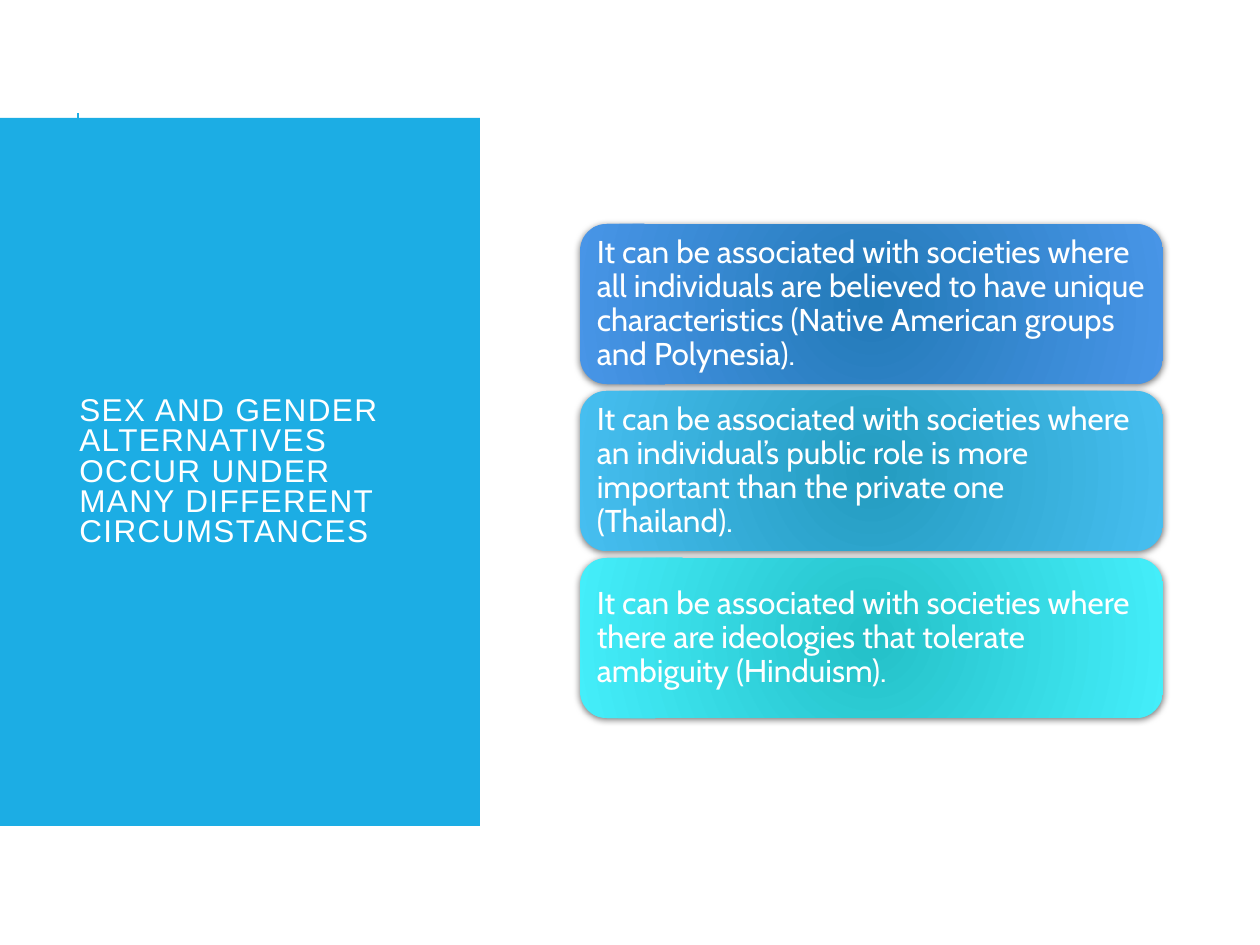
from lxml import etree
from pptx import Presentation
from pptx.dml.color import RGBColor
from pptx.enum.shapes import MSO_CONNECTOR, MSO_SHAPE
from pptx.enum.text import MSO_ANCHOR, PP_ALIGN
from pptx.oxml import parse_xml
from pptx.oxml.ns import nsdecls, qn
from pptx.util import Emu, Pt

STRAIGHT = MSO_CONNECTOR.STRAIGHT
RECT, ROUNDED = MSO_SHAPE.RECTANGLE, MSO_SHAPE.ROUNDED_RECTANGLE
MIDDLE, LEFT = MSO_ANCHOR.MIDDLE, PP_ALIGN.LEFT
EMU_PER_PX = 914400 / 126

ACCENT, WHITE = "1CADE4", "FFFFFF"
TITLE = "SEX AND GENDER ALTERNATIVES OCCUR UNDER MANY DIFFERENT CIRCUMSTANCES"
CARDS = [
    ("It can be associated with societies where all individuals are believed to "
     "have unique characteristics (Native American groups and Polynesia).",
     "237AB8", "4895E7"),
    ("It can be associated with societies where an individual’s public role is "
     "more important than the private one (Thailand).",
     "249CC0", "46BEF0"),
    ("It can be associated with societies where there are ideologies that "
     "tolerate ambiguity (Hinduism).",
     "24C0C8", "44EEFA"),
]
CARD_TOP, CARD_HEIGHT, CARD_GAP = 224, 160, 7


def px(n):
    return Emu(round(n * EMU_PER_PX))


def rgb(color):
    return RGBColor.from_string(color)


def add_line(s, x1, y1, x2, y2):
    line = s.shapes.add_connector(STRAIGHT, px(x1), px(y1), px(x2), px(y2))
    line.line.color.rgb = rgb(ACCENT)
    line.line.width = Pt(1.5)
    etree.SubElement(line._element.spPr, qn("a:effectLst"))


def add_box(s, kind, x, y, w, h):
    sp = s.shapes.add_shape(kind, px(x), px(y), px(w), px(h))
    sp.line.fill.background()
    sp.shadow.inherit = False
    return sp


def set_text(sp, text, font, line_spacing):
    tf = sp.text_frame
    tf.word_wrap = True
    tf.vertical_anchor = MIDDLE
    p = tf.paragraphs[0]
    p.alignment = LEFT
    p.line_spacing = line_spacing
    r = p.add_run()
    r.text = text
    p.font.name = font
    p.font.size = Pt(18)
    p.font.color.rgb = rgb(WHITE)
    return r


def set_radial_fill(sp, inner, outer):
    sp.fill.gradient()
    for stop, color in zip(sp.fill.gradient_stops, (inner, outer)):
        stop.color.rgb = rgb(color)
    grad = sp._element.spPr.find(qn("a:gradFill"))
    grad.replace(grad.find(qn("a:lin")), parse_xml(
        f'<a:path {nsdecls("a")} path="circle">'
        '<a:fillToRect l="100000" t="100000" r="100000" b="100000"/></a:path>'))


def add_soft_shadow(sp):
    sp._element.spPr.find(qn("a:effectLst")).append(parse_xml(
        f'<a:outerShdw {nsdecls("a")} blurRad="{Pt(4)}" dist="{Pt(1)}" '
        'dir="5400000" rotWithShape="0"><a:srgbClr val="000000">'
        '<a:alpha val="50000"/></a:srgbClr></a:outerShdw>'))


def add_title(s):
    panel = add_box(s, RECT, 0, 118, 480, 708)
    panel.fill.solid()
    panel.fill.fore_color.rgb = rgb(ACCENT)
    title = s.shapes.add_textbox(px(67), px(185), px(353), px(576))
    r = set_text(title, TITLE, "Arial", 0.8)
    r._r.get_or_add_rPr().set("spc", "80")


def add_card(s, y, text, inner, outer):
    card = add_box(s, ROUNDED, 580, y, 583, CARD_HEIGHT)
    set_radial_fill(card, inner, outer)
    add_soft_shadow(card)
    tf = card.text_frame
    tf.margin_left = tf.margin_right = tf.margin_top = tf.margin_bottom = px(9)
    set_text(card, text, "Cabin", 0.9)


def main():
    prs = Presentation()
    prs.slide_width, prs.slide_height = px(1260), px(945)
    s = prs.slides.add_slide(prs.slide_layouts[6])
    add_line(s, 78, 239, 78, 113)
    add_title(s)
    for i, card in enumerate(CARDS):
        add_card(s, CARD_TOP + i * (CARD_HEIGHT + CARD_GAP), *card)
    prs.save("out.pptx")


if __name__ == "__main__":
    main()
